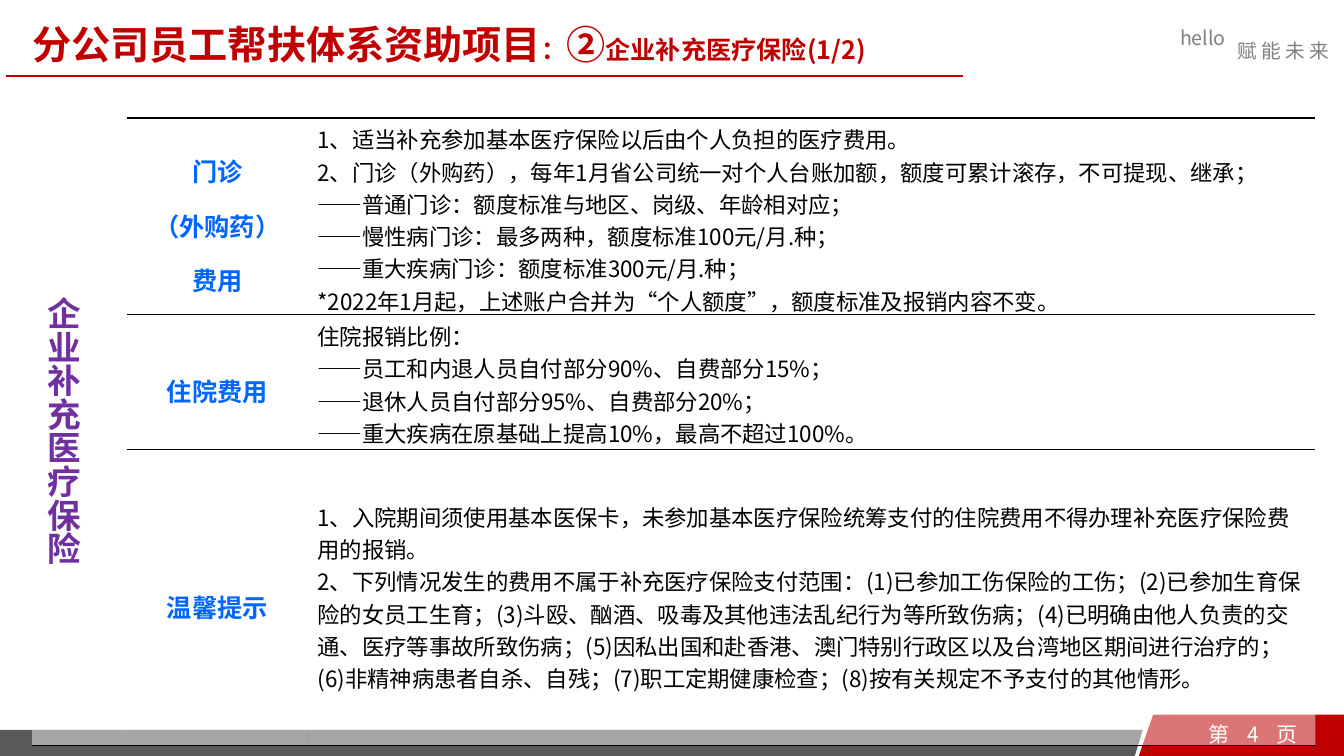
from dataclasses import dataclass

import pptx
import pptx.dml.color
import pptx.enum.shapes
import pptx.enum.text
import pptx.oxml.ns
import pptx.util
from pptx.util import Cm, Pt

ALIGN = pptx.enum.text.PP_ALIGN
ANCHOR = pptx.enum.text.MSO_ANCHOR


@dataclass(frozen=True)
class Theme:
    sans: str = "Noto Sans CJK SC"
    serif: str = "Times New Roman"
    red: str = "C00000"
    purple: str = "7030A0"
    blue: str = "0066FF"
    black: str = "000000"
    white: str = "FFFFFF"
    bar: str = "595959"
    hello: str = "7F7F7F"
    slogan: str = "808080"
    title: int = 28
    category: int = 24
    heading: int = 18
    body: int = 16
    page: int = 15
    motto: int = 14
    cell_opacity: int = 46


THEME = Theme()

TITLE_RUNS = [
    ("分公司员工帮扶体系资助项目", THEME.title),
    ("：", THEME.heading),
    ("②", THEME.title),
    ("企业补充医疗保险(1/2)", THEME.heading),
]
CATEGORY = "企业补充医疗保险"
BENEFITS = [
    (["门诊", "（外购药）", "费用"], [
        "1、适当补充参加基本医疗保险以后由个人负担的医疗费用。",
        "2、门诊（外购药），每年1月省公司统一对个人台账加额，额度可累计滚存，不可提现、继承；",
        "——普通门诊：额度标准与地区、岗级、年龄相对应；",
        "——慢性病门诊：最多两种，额度标准100元/月.种；",
        "——重大疾病门诊：额度标准300元/月.种；",
        "*2022年1月起，上述账户合并为“个人额度”，额度标准及报销内容不变。",
    ]),
    (["住院费用"], [
        "住院报销比例：",
        "——员工和内退人员自付部分90%、自费部分15%；",
        "——退休人员自付部分95%、自费部分20%；",
        "——重大疾病在原基础上提高10%，最高不超过100%。",
    ]),
    (["温馨提示"], [
        "1、入院期间须使用基本医保卡，未参加基本医疗保险统筹支付的住院费用不得办理补充医疗保险费用的报销。",
        "2、下列情况发生的费用不属于补充医疗保险支付范围：(1)已参加工伤保险的工伤；"
        "(2)已参加生育保险的女员工生育；(3)斗殴、酗酒、吸毒及其他违法乱纪行为等所致伤病；"
        "(4)已明确由他人负责的交通、医疗等事故所致伤病；"
        "(5)因私出国和赴香港、澳门特别行政区以及台湾地区期间进行治疗的；"
        "(6)非精神病患者自杀、自残；(7)职工定期健康检查；(8)按有关规定不予支付的其他情形。",
    ]),
]


def rgb(color):
    return pptx.dml.color.RGBColor.from_string(color)


def add_xml(parent, tag, **attributes):
    child = parent.makeelement(pptx.oxml.ns.qn(tag), attributes)
    parent.append(child)
    return child


def format_run(run, size, color, bold=False, font=THEME.sans):
    run.font.size = Pt(size)
    run.font.bold = bold
    run.font.color.rgb = rgb(color)
    run.font.name = font
    add_xml(run.font._element, "a:ea", typeface=THEME.sans)


def write_lines(text_frame, lines, size, color, bold=False, font=THEME.sans,
                align=ALIGN.LEFT, spacing=None):
    text_frame.text = "\n".join(lines)
    for paragraph in text_frame.paragraphs:
        paragraph.alignment = align
        paragraph.line_spacing = spacing
        for run in paragraph.runs:
            format_run(run, size, color, bold, font)


def add_label(slide, box, text, size, color, align=ALIGN.LEFT):
    shape = slide.shapes.add_textbox(*map(Cm, box))
    shape.text_frame.word_wrap = False
    write_lines(shape.text_frame, [text], size, color, align=align)
    return shape


def add_outline(slide, points, color):
    corners = [(Cm(x), Cm(y)) for x, y in points]
    builder = slide.shapes.build_freeform(*corners[0])
    builder.add_line_segments(corners[1:], close=True)
    shape = builder.convert_to_shape()
    shape.shadow.inherit = False
    shape.fill.solid()
    shape.fill.fore_color.rgb = rgb(color)
    shape.line.fill.background()


def add_footer(slide, left, top, width, height):
    right, bottom = left + width, top + height
    bar_top = top + 0.38
    add_outline(slide, [(left, bottom), (right - 5.27, bottom),
                        (right - 5.07, bar_top), (left, bar_top)], THEME.bar)
    add_outline(slide, [(right - 4.81, top), (right - 5.17, bottom),
                        (right, bottom), (right, top)], THEME.red)
    for index, text in enumerate("第4页"):
        add_label(slide, (right - 3.78 + 0.85 * index, top + 0.05, 1.27, 0.94), text,
                  THEME.page, THEME.white, ALIGN.CENTER)


def add_motto(slide, left, top):
    add_label(slide, (left, top, 1.68, 0.86), "hello", THEME.motto, THEME.hello)
    slogan = add_label(slide, (left + 1.45, top + 0.33, 2.95, 0.86), "赋能未来",
                       THEME.motto, THEME.slogan)
    slogan.text_frame.paragraphs[0].runs[0].font._element.set("spc", "300")


def add_heading(slide, left, top, width, height):
    title = slide.shapes.title
    title.left, title.top, title.width, title.height = map(Cm, (left, top, width, height))
    frame = title.text_frame
    frame.word_wrap = True
    frame.auto_size = pptx.enum.text.MSO_AUTO_SIZE.NONE
    frame.vertical_anchor = ANCHOR.MIDDLE
    paragraph = frame.paragraphs[0]
    paragraph.alignment = ALIGN.LEFT
    for text, size in TITLE_RUNS:
        run = paragraph.add_run()
        run.text = text
        format_run(run, size, THEME.red, bold=True)

    rule_y = Cm(top + height + 0.09)
    rule = slide.shapes.add_connector(pptx.enum.shapes.MSO_CONNECTOR.STRAIGHT,
                                      Cm(left - 0.41), rule_y, Cm(left + 23.7), rule_y)
    rule.line.color.rgb = rgb(THEME.red)
    rule.line.width = Pt(1.5)
    add_xml(rule._element.spPr, "a:effectLst")


def style_cell(cell, top=0, bottom=0):
    """Set border widths in points (0 for none) and the translucent white fill."""
    properties = cell._tc.get_or_add_tcPr()
    for side, width in (("L", 0), ("R", 0), ("T", top), ("B", bottom)):
        line = add_xml(properties, f"a:ln{side}", w=str(Pt(width)))
        if width:
            add_xml(add_xml(line, "a:solidFill"), "a:srgbClr", val=THEME.black)
        else:
            add_xml(line, "a:noFill")
    cell.fill.solid()
    cell.fill.fore_color.rgb = rgb(THEME.white)
    color = properties.find(pptx.oxml.ns.qn("a:solidFill"))[0]
    add_xml(color, "a:alpha", val=str(THEME.cell_opacity * 1000))


def fill_category(cell):
    """Stack the category name in a column one character wide."""
    cell.margin_left, cell.margin_right = Cm(0.38), Cm(1.13)
    cell.margin_top, cell.margin_bottom = Cm(0.48), Cm(0.2)
    cell.vertical_anchor = ANCHOR.MIDDLE
    cell._tc.get_or_add_tcPr().set("vert", "eaVert")
    write_lines(cell.text_frame, [CATEGORY], THEME.category, THEME.purple, True,
                align=ALIGN.CENTER, spacing=Pt(THEME.category))


def add_benefit_table(slide, left, top, column_widths, row_heights):
    frame = slide.shapes.add_table(len(row_heights), len(column_widths), Cm(left), Cm(top),
                                   Cm(sum(column_widths)), Cm(sum(row_heights)))
    table = frame.table
    table.first_row = table.horz_banding = False
    for column, width in zip(table.columns, column_widths):
        column.width = Cm(width)
    for row, height in zip(table.rows, row_heights):
        row.height = Cm(height)

    last = len(BENEFITS) - 1
    for index, (heading, details) in enumerate(BENEFITS):
        category_cell, heading_cell, detail_cell = table.rows[index].cells
        bottom = 0.25 if index == last else 1
        style_cell(category_cell, bottom=0.25 if index in (0, last) else 0)
        for cell in (heading_cell, detail_cell):
            style_cell(cell, top=1 if index else 1.5, bottom=bottom)
            cell.vertical_anchor = ANCHOR.MIDDLE
        write_lines(heading_cell.text_frame, heading, THEME.heading, THEME.blue,
                    True, THEME.serif, ALIGN.CENTER, 1.5)
        write_lines(detail_cell.text_frame, details, THEME.body, THEME.black)
        if index != last:
            detail_cell.margin_bottom = 0

    category = table.cell(0, 0)
    category.merge(table.cell(last, 0))
    fill_category(category)


def main():
    presentation = pptx.Presentation()
    presentation.slide_width, presentation.slide_height = Cm(33.87), Cm(19.05)
    slide = presentation.slides.add_slide(presentation.slide_layouts[5])
    add_footer(slide, 0, 18.01, 33.87, 1.04)
    add_motto(slide, 29.49, 0.53)
    add_heading(slide, 0.56, 0.38, 24.05, 1.45)
    add_benefit_table(slide, 0.81, 2.97, (2.39, 4.55, 25.4), (4.95, 3.4, 7.19))
    presentation.save("out.pptx")


if __name__ == "__main__":
    main()
